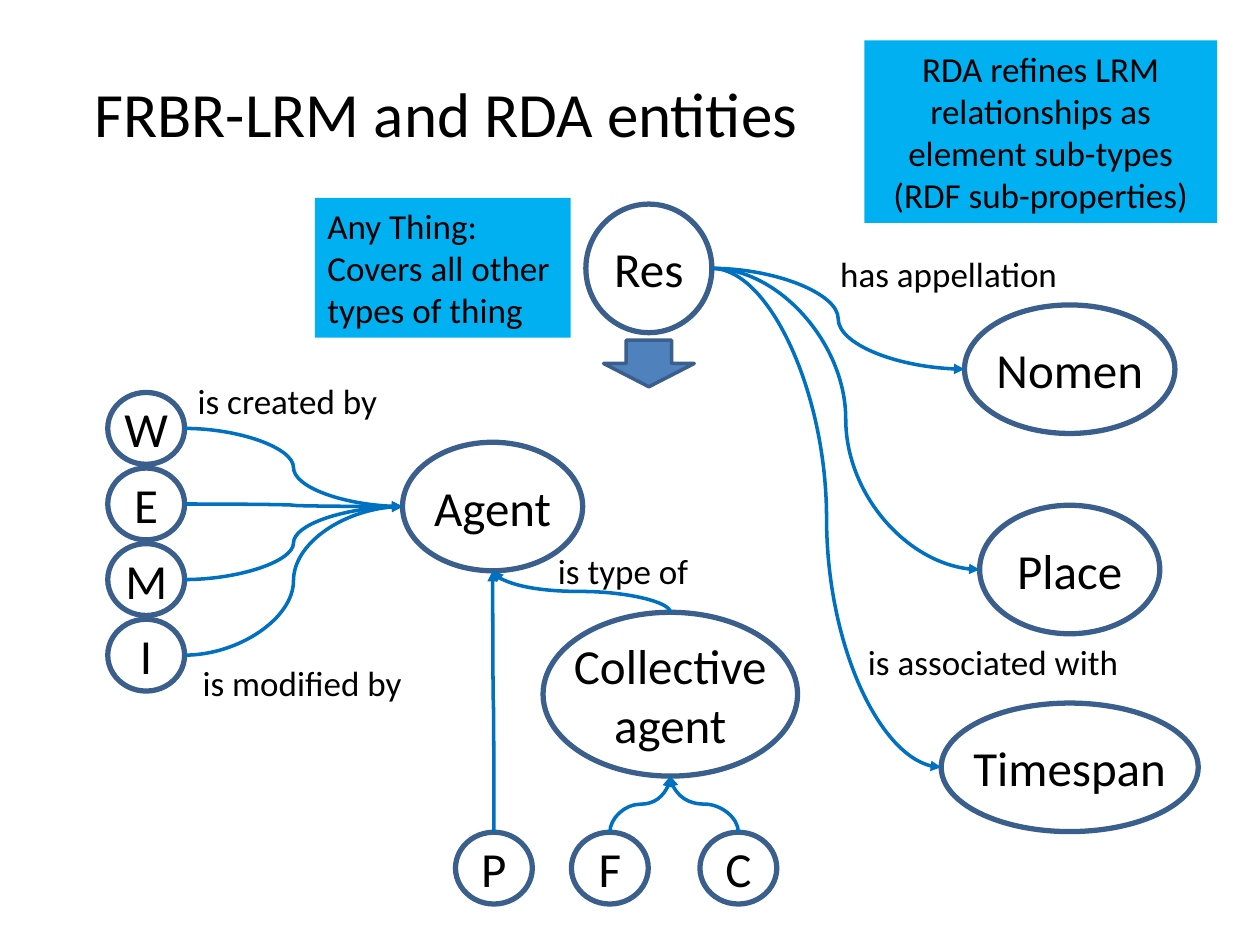
from pptx import Presentation, util as u
from pptx.dml.color import RGBColor
from pptx.enum import shapes, text
from pptx.oxml import parse_xml
from pptx.oxml.ns import nsdecls

BLACK = RGBColor(0x00, 0x00, 0x00)
OUTLINE = RGBColor(0x3A, 0x5F, 0x8C)
LINK = RGBColor(0x00, 0x70, 0xC0)
NOTE = RGBColor(0x00, 0xB0, 0xF0)
ARROW = RGBColor(0x4F, 0x81, 0xBD)
LEFT, CENTER = text.PP_ALIGN.LEFT, text.PP_ALIGN.CENTER
SMALL = (0.61, 0.57)  # size of the one-letter entities


def inches(*values):
    return [u.Inches(v) for v in values]


def write(sp, content, size=20, align=LEFT, wrap=False, inset=None):
    """Fill a shape with text, one paragraph per line of content."""
    tf = sp.text_frame
    tf.text = content
    tf.word_wrap = wrap
    tf.auto_size = text.MSO_AUTO_SIZE.NONE
    tf.vertical_anchor = text.MSO_ANCHOR.MIDDLE
    if inset is not None:
        tf.margin_left = tf.margin_right = u.Inches(inset)
        tf.margin_top = tf.margin_bottom = u.Inches(inset)
    for p in tf.paragraphs:
        p.alignment = align
        for r in p.runs:
            r.font.name, r.font.size = "Calibri", u.Pt(size)
            r.font.color.rgb = BLACK


def add_box(s, kind, left, top, width, height, fill=None, line=None, weight=3):
    sp = s.shapes.add_shape(kind, *inches(left, top, width, height))
    sp.shadow.inherit = False
    if fill is None:
        sp.fill.background()
    else:
        sp.fill.solid()
        sp.fill.fore_color.rgb = fill
    if line is None:
        sp.line.fill.background()
    else:
        sp.line.color.rgb, sp.line.width = line, u.Pt(weight)
    return sp


def add_entity(s, name, cx, cy, width, height):
    """Draw a named ellipse round a centre and return its side points."""
    sp = add_box(s, shapes.MSO_SHAPE.OVAL, cx - width / 2, cy - height / 2,
                 width, height, line=OUTLINE)
    write(sp, name, size=28, align=CENTER, inset=0)
    return {"top": (cx, cy - height / 2), "bottom": (cx, cy + height / 2),
            "left": (cx - width / 2, cy), "right": (cx + width / 2, cy)}


def add_note(s, content, left, top, width, height, align=LEFT):
    sp = add_box(s, shapes.MSO_SHAPE.RECTANGLE, left, top, width, height, fill=NOTE)
    write(sp, content, align=align, wrap=True)


def add_label(s, content, left, top, width):
    write(s.shapes.add_textbox(*inches(left, top, width, 0.44)), content)


def add_link(s, start, end, upward=False):
    """Curved arrow; an upward one is laid out flat and turned by 270 degrees."""
    (x1, y1), (x2, y2) = start, end
    if upward:
        cx, cy = (x1 + x2) / 2, (y1 + y2) / 2
        rise, run = (y1 - y2) / 2, (x2 - x1) / 2
        x1, y1, x2, y2 = cx - rise, cy - run, cx + rise, cy + run
    c = s.shapes.add_connector(shapes.MSO_CONNECTOR.CURVE, *inches(x1, y1, x2, y2))
    c.line.color.rgb, c.line.width = LINK, u.Pt(2)
    spPr = c._element.spPr
    if upward:
        spPr.xfrm.set("rot", str(270 * 60000))
    c.line._get_or_add_ln().append(
        parse_xml(f'<a:tailEnd {nsdecls("a")} type="triangle"/>'))
    spPr.append(parse_xml(f'<a:effectLst {nsdecls("a")}/>'))


def main():
    prs = Presentation()
    prs.slide_width, prs.slide_height = inches(10, 7.5)
    s = prs.slides.add_slide(prs.slide_layouts[5])

    # Title
    title = s.shapes.title
    title.left, title.top, title.width, title.height = inches(0.65, 0.54, 5.84, 0.71)
    write(title, "FRBR-LRM and RDA entities", size=36)

    # Res and the entities on the right
    res = add_entity(s, "Res", 5.15, 2.13, 1, 1.02)
    for name, cy, width in [("Nomen", 2.93, 1.67), ("Place", 4.52, 1.43),
                            ("Timespan", 6.09, 2.04)]:
        entity = add_entity(s, name, 8.49, cy, width, 1.02)
        add_link(s, res["right"], entity["left"])

    # Agents and their types
    agent = add_entity(s, "Agent", 3.91, 4.02, 1.43, 1.02)
    collective = add_entity(s, "Collective\nagent", 5.32, 5.51, 2.02, 1.3)
    add_link(s, collective["top"], agent["bottom"], upward=True)
    for name, cx, parent in [("P", 3.92, agent), ("F", 4.84, collective),
                             ("C", 5.86, collective)]:
        entity = add_entity(s, name, cx, 6.89, *SMALL)
        add_link(s, entity["top"], parent["bottom"], upward=True)

    # Work, expression, manifestation, item
    for row, name in enumerate("WEMI"):
        entity = add_entity(s, name, 1.16, 3.4 + 0.6 * row, *SMALL)
        add_link(s, entity["right"], agent["left"])

    # Relationship labels
    for content, left, top, width in [
            ("has appellation", 6.57, 1.95, 1.94),
            ("is created by", 1.47, 2.96, 1.64),
            ("is modified by", 1.51, 5.2, 1.8),
            ("is type of", 4.33, 4.31, 1.25),
            ("is associated with", 6.79, 5.03, 2.21)]:
        add_label(s, content, left, top, width)

    # Block arrow and notes
    add_box(s, shapes.MSO_SHAPE.DOWN_ARROW, 4.79, 2.7, 0.72, 0.37,
            fill=ARROW, line=OUTLINE, weight=2)
    add_note(s, "Any Thing:\nCovers all other types of thing", 2.5, 1.57, 2.03, 1.11)
    add_note(s, "RDA refines LRM relationships as element sub-types "
             "(RDF sub-properties)", 6.86, 0.32, 2.8, 1.45, align=CENTER)

    prs.save("out.pptx")


if __name__ == "__main__":
    main()
